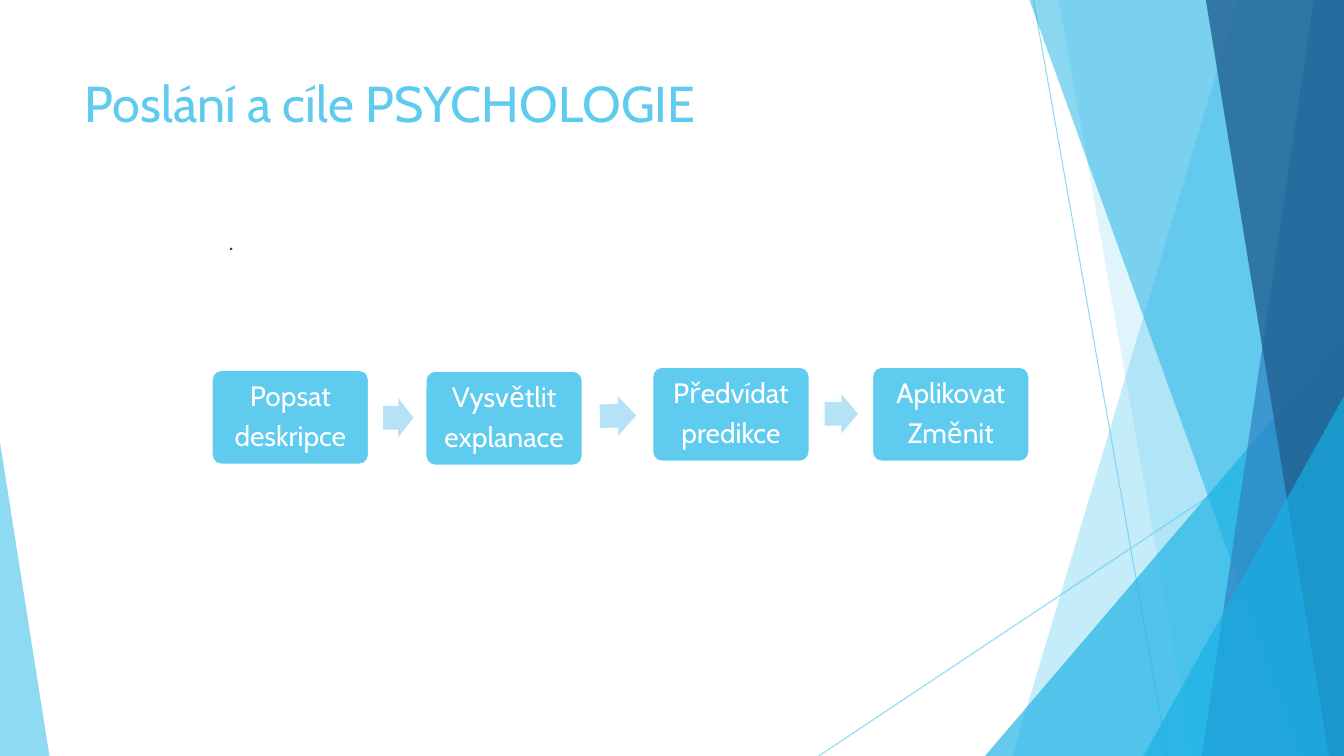
from lxml.etree import SubElement
from pptx import Presentation
from pptx.dml.color import RGBColor
from pptx.enum.shapes import MSO_CONNECTOR, MSO_SHAPE
from pptx.enum.text import MSO_ANCHOR, PP_ALIGN
from pptx.oxml.ns import qn
from pptx.util import Pt

PX = 9144  # 100 px to the inch
WIDE, HIGH = 1333, 750
FONT = "Cabin"
SKY, CYAN, BLUE, NAVY = "5FCBEF", "17B0E4", "2E83C3", "226292"
PALE, WHITE, GREY = "B6E2F6", "FFFFFF", "404040"


def paint(fill, color, owner=None, alpha=100):
    """Fill solidly; with an owner shape, also set its opacity in percent."""
    fill.solid()
    fill.fore_color.rgb = RGBColor.from_string(color)
    if owner is not None:
        tint = owner._element.spPr.find(".//" + qn("a:srgbClr"))
        SubElement(tint, qn("a:alpha"), val=str(alpha * 1000))


def place(kind, x, y, w, h, *adjust):
    """Add a preset shape without shadow or outline."""
    shape = shapes.add_shape(kind, x * PX, y * PX, w * PX, h * PX)
    shape.shadow.inherit = False
    shape.line.fill.background()
    for i, value in enumerate(adjust):
        shape.adjustments[i] = value
    return shape


deck = Presentation()
deck.slide_width, deck.slide_height = WIDE * PX, HIGH * PX
shapes = deck.slides.add_slide(deck.slide_layouts[6]).shapes

# Thin crossing lines
for ends in [(1025, 0, 1158, HIGH), (WIDE, 403, 812, HIGH)]:
    line = shapes.add_connector(MSO_CONNECTOR.STRAIGHT, *[n * PX for n in ends])
    line.line.width = Pt(0.75)
    paint(line.line.fill, SKY, line, 70)
    SubElement(line._element.spPr, qn("a:effectLst"))

# Facets on the right edge: left x at the top, left x at the foot, peak y
facets = [
    (1228, 1004, 0, SKY, 36),
    (1050, 1183, 0, SKY, 20),
    (WIDE, 977, 333, CYAN, 66),
    (1021, 1291, 0, CYAN, 50),
    (1303, 1192, 0, BLUE, 70),
    (1196, 1318, 0, NAVY, 80),
    (WIDE, 1134, 393, CYAN, 66),
]
for top, foot, peak, color, alpha in facets:
    if peak:
        facet = place(MSO_SHAPE.ISOSCELES_TRIANGLE,
                      foot, peak, WIDE - foot, HIGH - peak, 1)
    else:
        pen = shapes.build_freeform(top, 0, scale=PX)
        pen.add_line_segments([(WIDE, 0), (WIDE, HIGH), (foot, HIGH)])
        facet = pen.convert_to_shape()
        facet.shadow.inherit = False
        facet.line.fill.background()
    paint(facet.fill, color, facet, alpha)

wedge = place(MSO_SHAPE.ISOSCELES_TRIANGLE, 0, 439, 49, 311, 0)
paint(wedge.fill, SKY, wedge, 70)

# Title and body
texts = [
    ("Poslání a cíle PSYCHOLOGIE", 74, 67, 940, 144, 36, SKY),
    (".", 217, 219, 900, 510, 18, GREY),
]
for text, x, y, w, h, size, color in texts:
    frame = shapes.add_textbox(x * PX, y * PX, w * PX, h * PX).text_frame
    frame.word_wrap = True
    para = frame.paragraphs[0]
    para.text = text
    para.font.name, para.font.size = FONT, Pt(size)
    para.font.color.rgb = RGBColor.from_string(color)

# Steps of the process
steps = [
    (210, 367, "Popsat", "deskripce"),
    (422, 368, "Vysvětlit", "explanace"),
    (647, 364, "Předvídat", "predikce"),
    (865, 364, "Aplikovat", "Změnit"),
]
for x, y, *words in steps:
    box = place(MSO_SHAPE.ROUNDED_RECTANGLE, x, y, 156, 94, 0.1)
    paint(box.fill, SKY)
    paint(box.line.fill, WHITE)
    box.line.width = Pt(1.5)
    frame = box.text_frame
    frame.word_wrap = True
    frame.vertical_anchor = MSO_ANCHOR.MIDDLE
    frame.margin_left = frame.margin_right = 8 * PX
    frame.margin_top = frame.margin_bottom = 8 * PX
    frame.text = "\n".join(words)
    for para in frame.paragraphs:
        para.alignment = PP_ALIGN.CENTER
        para.line_spacing = 0.9
        para.space_after = Pt(7)
        para.font.name, para.font.size = FONT, Pt(20)
        para.font.color.rgb = RGBColor.from_string(WHITE)

for x, y, w, turn in [(380, 395, 30, 0.3), (595, 393, 36, -1.2), (818, 391, 33, 0)]:
    arrow = place(MSO_SHAPE.RIGHT_ARROW, x, y, w, 39, 0.6, 0.5)
    arrow.rotation = turn
    paint(arrow.fill, PALE)

deck.save("out.pptx")
